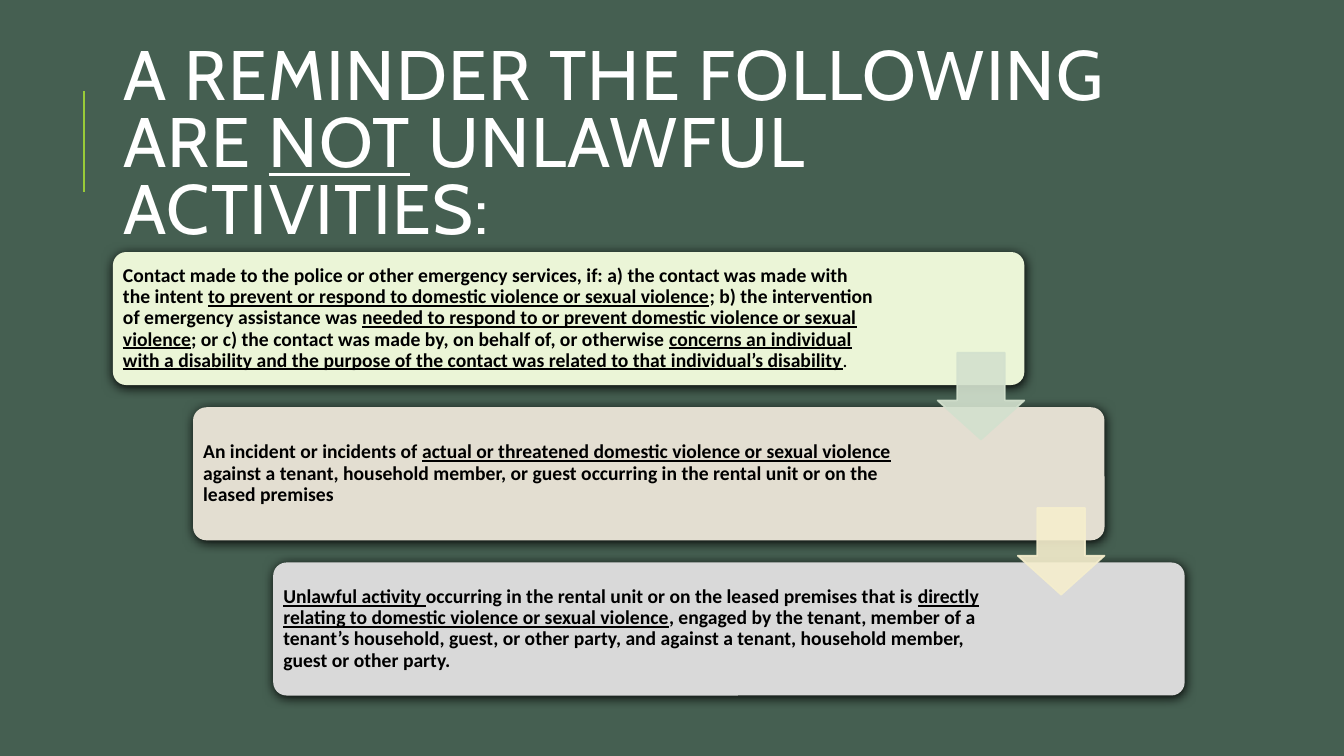
from dataclasses import dataclass

from lxml.etree import SubElement
from pptx import Presentation
from pptx.dml.color import RGBColor
from pptx.enum.shapes import MSO_CONNECTOR, MSO_SHAPE
from pptx.enum.text import MSO_ANCHOR, MSO_AUTO_SIZE, PP_ALIGN
from pptx.oxml.ns import qn
from pptx.util import Inches, Pt

CARD_LEFT, CARD_TOP = 1.12, 2.5
CARD_WIDTH, CARD_HEIGHT = 9.04, 1.32
STEP_X, STEP_Y = 0.795, 1.54
TEXT_MARGIN = 0.04
ARROW_LEFT, ARROW_TOP, ARROW_SIZE = 9.3, 3.5, 0.86


@dataclass
class Phrase:
    text: str
    underline: bool = False
    bold: bool | None = None


@dataclass
class Activity:
    fill: str
    text_width: float
    phrases: list[Phrase]


TITLE = [
    Phrase("A REMINDER THE FOLLOWING ARE "),
    Phrase("NOT", True),
    Phrase(" UNLAWFUL ACTIVITIES:"),
]

ACTIVITIES = [
    Activity("EBF5D7", 7.61, [
        Phrase("Contact made to the police or other emergency services, if: "
               "a) the contact was made with the intent "),
        Phrase("to prevent or respond to domestic violence or sexual violence", True),
        Phrase("; b) the intervention of emergency assistance was "),
        Phrase("needed to respond to or prevent domestic violence or sexual violence", True),
        Phrase("; or c) the contact was made by, on behalf of, or otherwise "),
        Phrase("concerns an individual with a disability and the purpose of the contact "
               "was related to that individual’s disability", True),
        Phrase(".", bold=False),
    ]),
    Activity("E3DED1", 7.3, [
        Phrase("An incident or incidents of "),
        Phrase("actual or threatened domestic violence or sexual violence ", True),
        Phrase("against a tenant, household member, or guest occurring in the rental unit "
               "or on the leased premises"),
    ]),
    Activity("D9D9D9", 7.3, [
        Phrase("Unlawful activity ", True),
        Phrase("occurring in the rental unit or on the leased premises that is "),
        Phrase("directly relating to domestic violence or sexual violence", True),
        Phrase(", engaged by the tenant, member of a tenant’s household, guest, or other "
               "party, and against a tenant, household member, guest or other party."),
    ]),
]

ARROW_COLORS = ["D3E1CE", "F5EECD"]


def paint(color_format, color: str, alpha: int = 100) -> None:
    color_format.rgb = RGBColor.from_string(color)
    if alpha < 100:
        parent = color_format._xFill
        SubElement(parent.find(qn("a:srgbClr")), qn("a:alpha"), val=str(alpha * 1000))


def fill_solid(fill, color: str, alpha: int = 100) -> None:
    fill.solid()
    fill.fore_color.rgb = RGBColor.from_string(color)
    if alpha < 100:
        for srgb in fill._xPr.iterchildren(qn("a:solidFill")):
            SubElement(srgb.find(qn("a:srgbClr")), qn("a:alpha"), val=str(alpha * 1000))


def write_phrases(frame, phrases: list[Phrase], font_name: str, size: float,
                  color: str, bold: bool, line_spacing: float) -> None:
    frame.word_wrap = True
    frame.auto_size = MSO_AUTO_SIZE.NONE
    frame.vertical_anchor = MSO_ANCHOR.MIDDLE
    paragraph = frame.paragraphs[0]
    paragraph.alignment = PP_ALIGN.LEFT
    paragraph.line_spacing = line_spacing
    for phrase in phrases:
        run = paragraph.add_run()
        run.text = phrase.text
        if phrase.underline:
            run.font.underline = True
        if phrase.bold is not None:
            run.font.bold = phrase.bold
    font = paragraph.font
    font.name = font_name
    font.size = Pt(size)
    font.bold = bold
    fill_solid(font.fill, color)


def add_title(slide) -> None:
    title = slide.shapes.title
    title.left, title.top = Inches(1.12), Inches(0.64)
    title.width, title.height = Inches(10.63), Inches(1.64)
    write_phrases(title.text_frame, TITLE, "Cabin", 50, "FFFFFF", False, 0.8)
    for run in title.text_frame.paragraphs[0].runs:
        run.font._element.set("spc", "100")


def add_accent_line(slide) -> None:
    accent = slide.shapes.add_connector(
        MSO_CONNECTOR.STRAIGHT, Inches(0.83), Inches(1.9), Inches(0.83), Inches(0.9))
    fill_solid(accent.line.fill, "99CB38")
    accent.line.width = Pt(1.5)
    SubElement(accent._element.spPr, qn("a:effectLst"))


def add_card(slide, index: int, activity: Activity) -> None:
    left, top = CARD_LEFT + index * STEP_X, CARD_TOP + index * STEP_Y
    card = slide.shapes.add_shape(
        MSO_SHAPE.ROUNDED_RECTANGLE, Inches(left), Inches(top),
        Inches(CARD_WIDTH), Inches(CARD_HEIGHT))
    card.adjustments[0] = 0.1
    fill_solid(card.fill, activity.fill)
    card.line.fill.background()
    card.shadow.inherit = False
    effects = card._element.spPr.find(qn("a:effectLst"))
    shadow = SubElement(effects, qn("a:outerShdw"), blurRad=str(Pt(8.5)),
                        dist=str(Pt(1)), dir="5400000", rotWithShape="0")
    SubElement(shadow, qn("a:srgbClr"), val="000000")

    description = slide.shapes.add_textbox(
        Inches(left + TEXT_MARGIN), Inches(top + TEXT_MARGIN),
        Inches(activity.text_width), Inches(CARD_HEIGHT - 2 * TEXT_MARGIN))
    frame = description.text_frame
    frame.margin_left = frame.margin_right = Inches(0.06)
    frame.margin_top = frame.margin_bottom = Inches(0.06)
    write_phrases(frame, activity.phrases, "Calibri", 14, "000000", True, 0.9)


def add_arrow(slide, index: int, color: str) -> None:
    arrow = slide.shapes.add_shape(
        MSO_SHAPE.DOWN_ARROW, Inches(ARROW_LEFT + index * STEP_X),
        Inches(ARROW_TOP + index * STEP_Y), Inches(ARROW_SIZE), Inches(ARROW_SIZE))
    arrow.adjustments[0] = 0.55
    arrow.adjustments[1] = 0.45
    arrow.shadow.inherit = False
    fill_solid(arrow.fill, color, 90)
    fill_solid(arrow.line.fill, color, 90)
    arrow.line.width = Pt(1.25)


def main() -> None:
    presentation = Presentation()
    presentation.slide_width, presentation.slide_height = Inches(13.33), Inches(7.5)
    slide = presentation.slides.add_slide(presentation.slide_layouts[5])
    fill_solid(slide.background.fill, "455F51")
    add_accent_line(slide)
    add_title(slide)
    for index, activity in enumerate(ACTIVITIES):
        add_card(slide, index, activity)
    for index, color in enumerate(ARROW_COLORS):
        add_arrow(slide, index, color)
    presentation.save("out.pptx")


if __name__ == "__main__":
    main()
